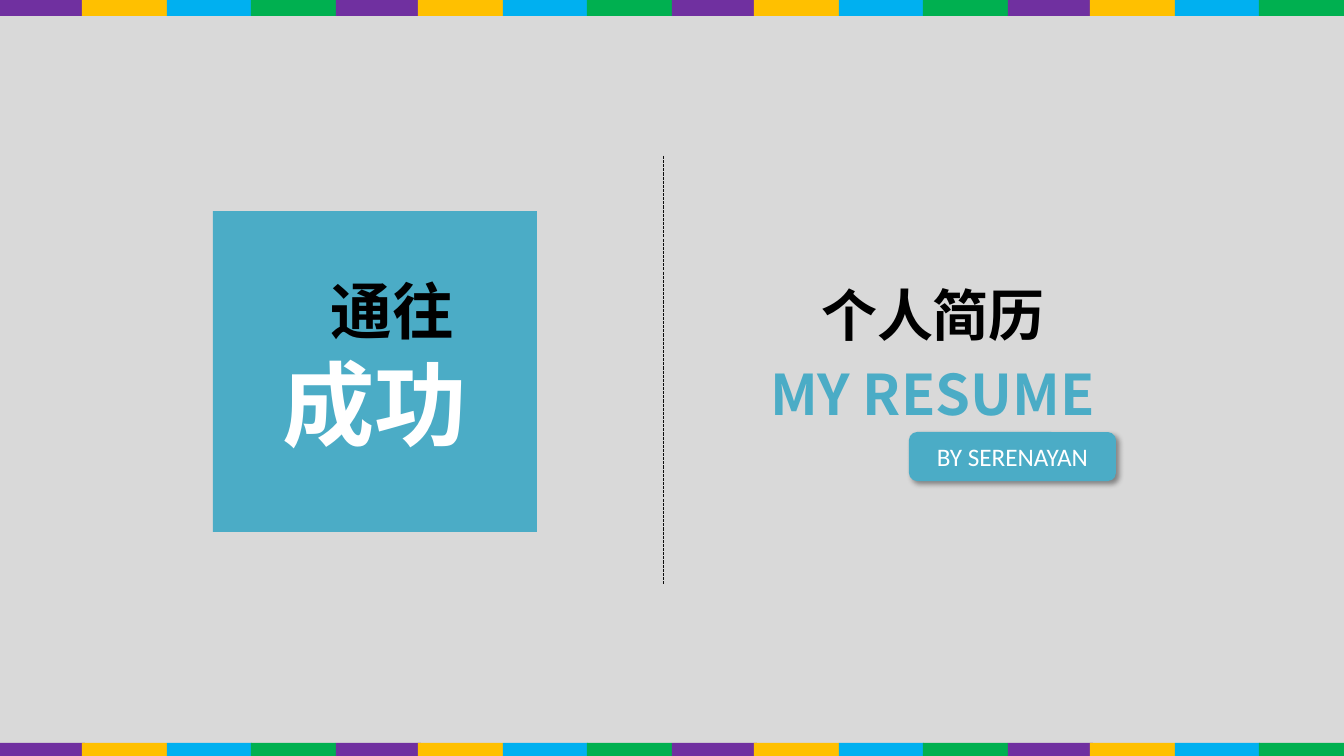
from lxml import etree
from pptx import Presentation
from pptx.dml.color import RGBColor
from pptx.enum.dml import MSO_LINE
from pptx.enum.shapes import MSO_CONNECTOR, MSO_SHAPE
from pptx.enum.text import MSO_ANCHOR, MSO_AUTO_SIZE, PP_ALIGN
from pptx.oxml.ns import qn
from pptx.util import Emu, Pt

RECT, ROUNDED = MSO_SHAPE.RECTANGLE, MSO_SHAPE.ROUNDED_RECTANGLE
LEFT, CENTER = PP_ALIGN.LEFT, PP_ALIGN.CENTER
TOP, MIDDLE = MSO_ANCHOR.TOP, MSO_ANCHOR.MIDDLE

PURPLE = RGBColor(0x70, 0x30, 0xA0)
AMBER = RGBColor(0xFF, 0xC0, 0x00)
SKY = RGBColor(0x00, 0xB0, 0xF0)
GREEN = RGBColor(0x00, 0xB0, 0x50)
TEAL = RGBColor(0x4B, 0xAC, 0xC6)
GREY = RGBColor(0xD9, 0xD9, 0xD9)
INK = RGBColor(0x0D, 0x0D, 0x0D)
BLACK = RGBColor(0, 0, 0)
WHITE = RGBColor(255, 255, 255)
HEAVY, LIGHT = "Noto Sans CJK SC", "Calibri"

# Content; boxes are left, top, width, height in px
PAGE_WIDTH, PAGE_HEIGHT = 1344, 756
STRIPES = [(0, PURPLE), (82, AMBER), (167, SKY), (251, GREEN)]
STRIPE_WIDTH, STRIPE_PERIOD = 85, 336
BANDS = [(0, 16), (743, 13)]  # top, height
DIVIDER = (664, 156, 664, 584)
SQUARE = (213, 211, 324, 321)
SLOGAN_BOX = (267, 268, 215, 197)
SLOGAN = [("通往", 44, BLACK, 36), ("成功", 66, WHITE, 0)]  # last: indent
TITLE, TITLE_BOX = "个人简历", (811, 275, 254, 78)
SUBTITLE, SUBTITLE_BOX = "MY RESUME", (760, 354, 380, 78)
AUTHOR, AUTHOR_BOX = "BY SERENAYAN", (909, 432, 207, 49)


def px(length):
    return Emu(round(length * 914400 / 100.8))


def add_block(page, kind, box, color):
    block = page.shapes.add_shape(kind, *map(px, box))
    block.shadow.inherit = False
    block.fill.solid()
    block.fill.fore_color.rgb = color
    block.line.fill.background()
    return block


def style(para, size, color, name=HEAVY, bold=True, align=CENTER):
    para.alignment = align
    para.space_before = Pt(0)
    font = para.font
    font.name, font.size, font.bold = name, Pt(size), bold
    font.color.rgb = color
    # East Asian characters take their own typeface entry, after the Latin one
    latin = font._element.find(qn("a:latin"))
    east_asian = etree.Element(qn("a:ea"), typeface=name)
    latin.addnext(east_asian)
    for span in para.runs:
        span.font.name = name
        span_latin = span.font._element.find(qn("a:latin"))
        span_latin.addnext(etree.Element(qn("a:ea"), typeface=name))


def fill_heading(holder, text, box, color):
    holder.left, holder.top, holder.width, holder.height = map(px, box)
    frame = holder.text_frame
    frame.text = text
    frame.auto_size = MSO_AUTO_SIZE.NONE
    frame.vertical_anchor = TOP
    style(frame.paragraphs[0], 40, color, align=LEFT)


def add_slogan(page):
    frame = page.shapes.add_textbox(*map(px, SLOGAN_BOX)).text_frame
    frame.word_wrap = True
    for index, (text, size, color, indent) in enumerate(SLOGAN):
        para = frame.add_paragraph() if index else frame.paragraphs[0]
        para.text = text
        style(para, size, color)
        para._p.get_or_add_pPr().set("marL", str(px(indent)))


def add_divider(page):
    line = page.shapes.add_connector(MSO_CONNECTOR.STRAIGHT, *map(px, DIVIDER))
    line.line.color.rgb = INK
    line.line.width = Pt(0.75)
    line.line.dash_style = MSO_LINE.SQUARE_DOT
    etree.SubElement(line._element.spPr, qn("a:effectLst"))


def add_author(page):
    badge = add_block(page, ROUNDED, AUTHOR_BOX, TEAL)
    effects = badge._element.spPr.find(qn("a:effectLst"))
    shadow = etree.SubElement(effects, qn("a:outerShdw"), blurRad=str(Pt(4)),
                              dist=str(Pt(3)), dir=str(45 * 60000),
                              algn="tl", rotWithShape="0")
    black = etree.SubElement(shadow, qn("a:srgbClr"), val=str(BLACK))
    etree.SubElement(black, qn("a:alpha"), val="40000")
    frame = badge.text_frame
    frame.text = AUTHOR
    frame.vertical_anchor = MIDDLE
    style(frame.paragraphs[0], 18, WHITE, LIGHT, False)


def main():
    deck = Presentation()
    deck.slide_width, deck.slide_height = px(PAGE_WIDTH), px(PAGE_HEIGHT)
    page = deck.slides.add_slide(deck.slide_layouts[0])
    page.background.fill.solid()
    page.background.fill.fore_color.rgb = GREY

    for top, height in BANDS:
        for start in range(0, PAGE_WIDTH, STRIPE_PERIOD):
            for offset, color in STRIPES:
                box = (start + offset, top, STRIPE_WIDTH, height)
                add_block(page, RECT, box, color)
    add_divider(page)
    add_block(page, RECT, SQUARE, TEAL)
    add_slogan(page)
    fill_heading(page.shapes.title, TITLE, TITLE_BOX, BLACK)
    fill_heading(page.placeholders[1], SUBTITLE, SUBTITLE_BOX, TEAL)
    add_author(page)
    deck.save("out.pptx")


if __name__ == "__main__":
    main()
